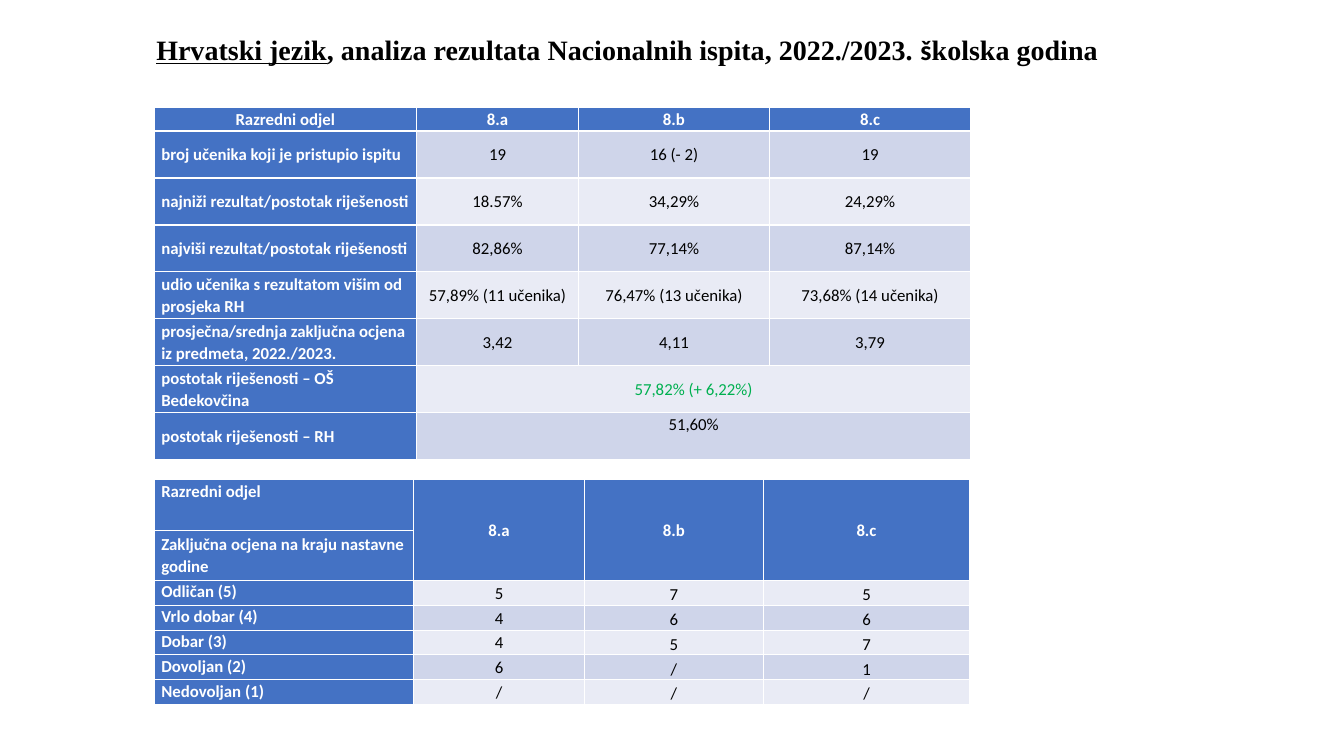
"""Build a slide with two tables of national exam results in Croatian."""
from dataclasses import dataclass

from pptx import Presentation
from pptx.dml.color import RGBColor as RGB
from pptx.enum.text import MSO_ANCHOR as Anchor, MSO_AUTO_SIZE as Fit, PP_ALIGN as Align
from pptx.util import Inches, Pt


@dataclass(frozen=True)
class Theme:
    head: str = "4472C4"
    dark: str = "CFD5EA"
    light: str = "E9EBF5"
    white: str = "FFFFFF"
    black: str = "000000"
    green: str = "00B050"
    serif: str = "Times New Roman"
    sans: str = "Calibri"
    title: int = 20
    body: int = 12


theme = Theme()
unit = Inches(0.01)
left, wide = 153 * unit, 810 * unit


def write(para, text, face, size, tint, bold):
    run = para.add_run()
    run.text = text
    font = run.font
    font.name, font.size, font.bold = face, Pt(size), bold
    font.color.rgb = RGB.from_string(tint)
    return run


def fill(top, cols, rows, data, spans, heads, place):
    frame = slide.shapes.add_table(len(rows), len(cols), left, top * unit, wide, int(sum(rows) * unit))
    table = frame.table
    table.first_col = True
    for col, size in zip(table.columns, cols):
        col.width = int(size * unit)
    for row, size in zip(table.rows, rows):
        row.height = int(size * unit)
    for start, end in spans:
        table.cell(*start).merge(table.cell(*end))
    for r, line in enumerate(data):
        for c in range(len(cols)):
            cell = table.cell(r, c)
            head = r < heads or c == 0
            band = theme.dark if r % 2 else theme.light
            cell.fill.solid()
            cell.fill.fore_color.rgb = RGB.from_string(theme.head if head else band)
            cell.margin_left = cell.margin_right = 7 * unit
            cell.margin_top = cell.margin_bottom = 0
            cell.vertical_anchor = place(r, c)
            if c >= len(line) or cell.is_spanned:
                continue
            para = cell.text_frame.paragraphs[0]
            para.line_spacing = 1.07
            para.alignment = Align.CENTER if c or heads == 1 and r == 0 else Align.LEFT
            plain = theme.green if "+" in line[c] else theme.black
            write(para, line[c], theme.sans, theme.body, theme.white if head else plain, head)


deck = Presentation()
deck.slide_width, deck.slide_height = 1333 * unit, 750 * unit
slide = deck.slides.add_slide(deck.slide_layouts[5])

title = slide.shapes.title
title.left, title.top, title.width, title.height = [n * unit for n in (145, 27, 1067, 74)]
frame = title.text_frame
frame.word_wrap = True
frame.auto_size = Fit.NONE
frame.vertical_anchor = Anchor.TOP
para = frame.paragraphs[0]
para.alignment = Align.LEFT
parts = [
    ("Hrvatski jezik", theme.serif, True),
    (", analiza rezultata Nacionalnih ispita, 2022./2023. ", theme.serif, False),
    ("š", theme.sans, False),
    ("kolska godina", theme.serif, False),
]
for text, face, under in parts:
    write(para, text, face, theme.title, theme.black, True).font.underline = under

results = [
    ("Razredni odjel", "8.a", "8.b", "8.c"),
    ("broj učenika koji je pristupio ispitu", "19", "16 (- 2)", "19"),
    ("najniži rezultat/postotak riješenosti", "18.57%", "34,29%", "24,29%"),
    ("najviši rezultat/postotak riješenosti", "82,86%", "77,14%", "87,14%"),
    ("udio učenika s rezultatom višim od prosjeka RH",
     "57,89% (11 učenika)", "76,47% (13 učenika)", "73,68% (14 učenika)"),
    ("prosječna/srednja zaključna ocjena iz predmeta, 2022./2023.", "3,42", "4,11", "3,79"),
    ("postotak riješenosti – OŠ Bedekovčina", "57,82% (+ 6,22%)"),
    ("postotak riješenosti – RH", "51,60%"),
]
fill(107, (260, 161, 189, 200), [23] + [46.6] * 7, results,
     [((r, 1), (r, 3)) for r in (6, 7)], 1,
     lambda r, c: Anchor.TOP if r == 7 and c else Anchor.MIDDLE)

grades = [
    ("Razredni odjel", "8.a", "8.b", "8.c"),
    ("Zaključna ocjena na kraju nastavne godine",),
    ("Odličan (5)", "5", "7", "5"),
    ("Vrlo dobar (4)", "4", "6", "6"),
    ("Dobar (3)", "4", "5", "7"),
    ("Dovoljan (2)", "6", "/", "1"),
    ("Nedovoljan (1)", "/", "/", "/"),
]
sides = (Anchor.TOP, Anchor.MIDDLE, Anchor.BOTTOM, Anchor.BOTTOM)
fill(476, (257, 170, 177, 205), [50] * 2 + [24.6] * 5, grades,
     [((0, c), (1, c)) for c in (1, 2, 3)], 2,
     lambda r, c: sides[c] if r > 1 or r + c == 0 else Anchor.MIDDLE)

deck.save("out.pptx")
